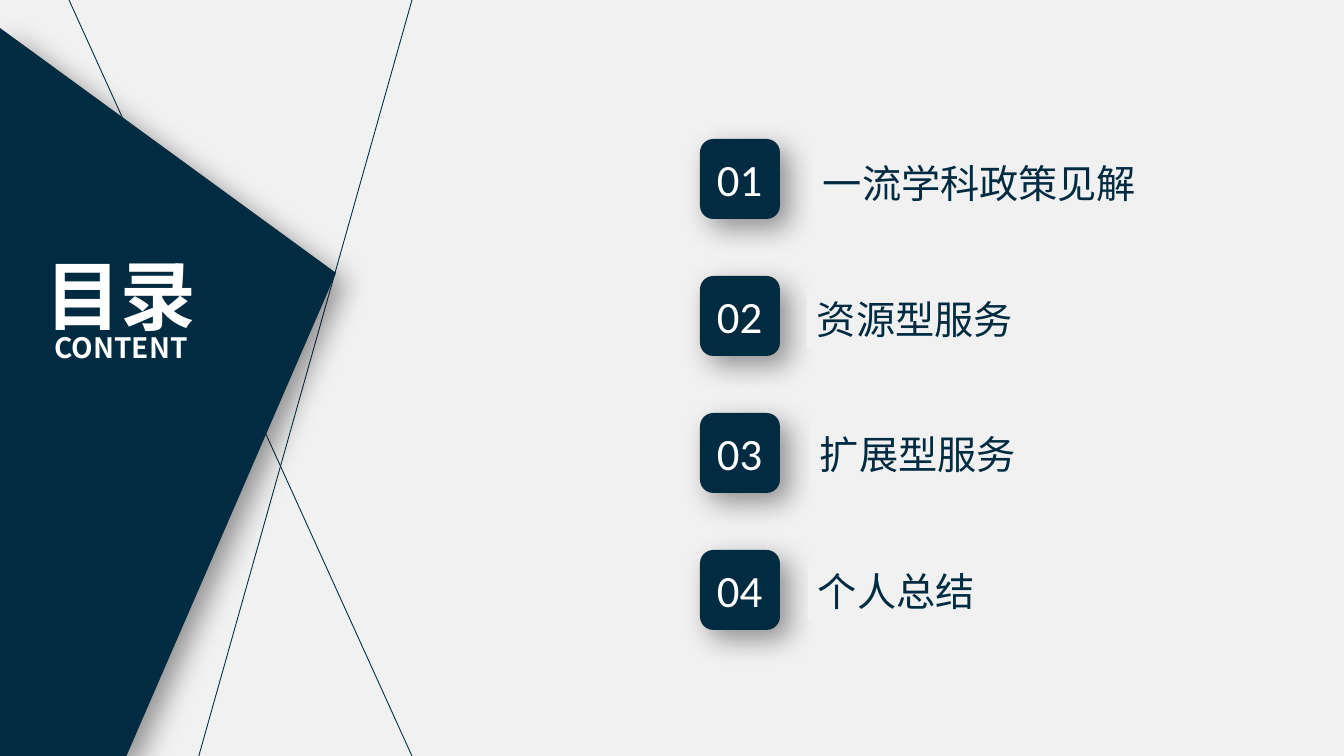
"""Build the contents slide: a dark wedge with the title and four numbered topics."""
from lxml.etree import SubElement
from pptx import Presentation
from pptx.dml.color import RGBColor
from pptx.enum.shapes import MSO_CONNECTOR, MSO_SHAPE
from pptx.enum.text import MSO_ANCHOR, MSO_AUTO_SIZE, PP_ALIGN
from pptx.oxml import parse_xml
from pptx.oxml.ns import nsdecls, qn
from pptx.util import Pt

SCALE = 12192000 / 1344
NAVY, PALE, WHITE = "002B41", "F1F1F1", "FFFFFF"
HAN = "Noto Sans CJK SC"
SHADOW = (
    f'<a:effectLst {nsdecls("a")}><a:outerShdw blurRad="254000" dist="127000" '
    'dir="2700000" algn="tl" rotWithShape="0"><a:srgbClr val="000000">'
    '<a:alpha val="40000"/></a:srgbClr></a:outerShdw></a:effectLst>'
)


def px(*lengths):
    return [round(length * SCALE) for length in lengths]


def write(paragraph, text, size, color, face, bold=False):
    run = paragraph.add_run()
    run.text = text
    run.font.color.rgb = RGBColor.from_string(color)
    for key, value in {"size": Pt(size), "name": face, "bold": bold}.items():
        setattr(run.font, key, value)
    SubElement(run.font._element, qn("a:ea")).set("typeface", face)


deck = Presentation()
deck.slide_width, deck.slide_height = px(1344, 756)
slide = deck.slides.add_slide(deck.slide_layouts[5])
slide.background.fill.solid()
slide.background.fill.fore_color.rgb = RGBColor.from_string(PALE)
shapes = slide.shapes

for ends in [(412, 0, 196, 766), (412, 756, 60, -20)]:
    ray = shapes.add_connector(MSO_CONNECTOR.STRAIGHT, *px(*ends))
    ray.line.color.rgb = RGBColor.from_string(NAVY)
    ray.line.width = Pt(0.63)
    SubElement(ray._element.spPr, qn("a:effectLst"))

outline = shapes.build_freeform(126, 757, scale=SCALE)
outline.add_line_segments([(0, 757), (0, 28), (336, 273)], close=True)
wedge = outline.convert_to_shape()
raised = [wedge]

heading = shapes.title
heading.left, heading.top, heading.width, heading.height = px(24, 238, 194, 136)
shapes._spTree.append(heading._element)
heading_format = {
    "word_wrap": True,
    "auto_size": MSO_AUTO_SIZE.SHAPE_TO_FIT_TEXT,
    "vertical_anchor": MSO_ANCHOR.MIDDLE,
}
for key, value in heading_format.items():
    setattr(heading.text_frame, key, value)
chinese = heading.text_frame.paragraphs[0]
english = heading.text_frame.add_paragraph()
for line, text, size in [(chinese, "目录", 54), (english, "CONTENT", 20)]:
    line.alignment = PP_ALIGN.CENTER
    write(line, text, size, WHITE, HAN, bold=True)
english.line_spacing = 0.68

topics = [
    ("一流学科政策见解", 813, 154, 396),
    ("资源型服务", 807, 290, 320),
    ("扩展型服务", 810, 425, 320),
    ("个人总结", 808, 562, 320),
]
for index, (topic, left, top, width) in enumerate(topics):
    tile_top = 139 + 137 * index
    tile = shapes.add_shape(MSO_SHAPE.ROUNDED_RECTANGLE, *px(700, tile_top, 80, 80))
    raised.append(tile)

    number = shapes.add_textbox(*px(707, tile_top + 8, 66, 64))
    number.text_frame.word_wrap = False
    write(number.text_frame.paragraphs[0], f"{index + 1:02}", 32, WHITE, "Calibri")

    label = shapes.add_shape(MSO_SHAPE.RECTANGLE, *px(left, top, width, 58))
    label.shadow.inherit = False
    label.fill.solid()
    label.fill.fore_color.rgb = RGBColor.from_string(PALE)
    label.line.fill.background()
    label.text_frame.word_wrap = True
    label.text_frame.vertical_anchor = MSO_ANCHOR.MIDDLE
    label.text_frame.paragraphs[0].alignment = PP_ALIGN.LEFT
    write(label.text_frame.paragraphs[0], topic, 28, NAVY, HAN)

for solid in raised:
    solid.fill.solid()
    solid.fill.fore_color.rgb = RGBColor.from_string(NAVY)
    solid.line.fill.background()
    solid._element.spPr.append(parse_xml(SHADOW))

deck.save("out.pptx")
